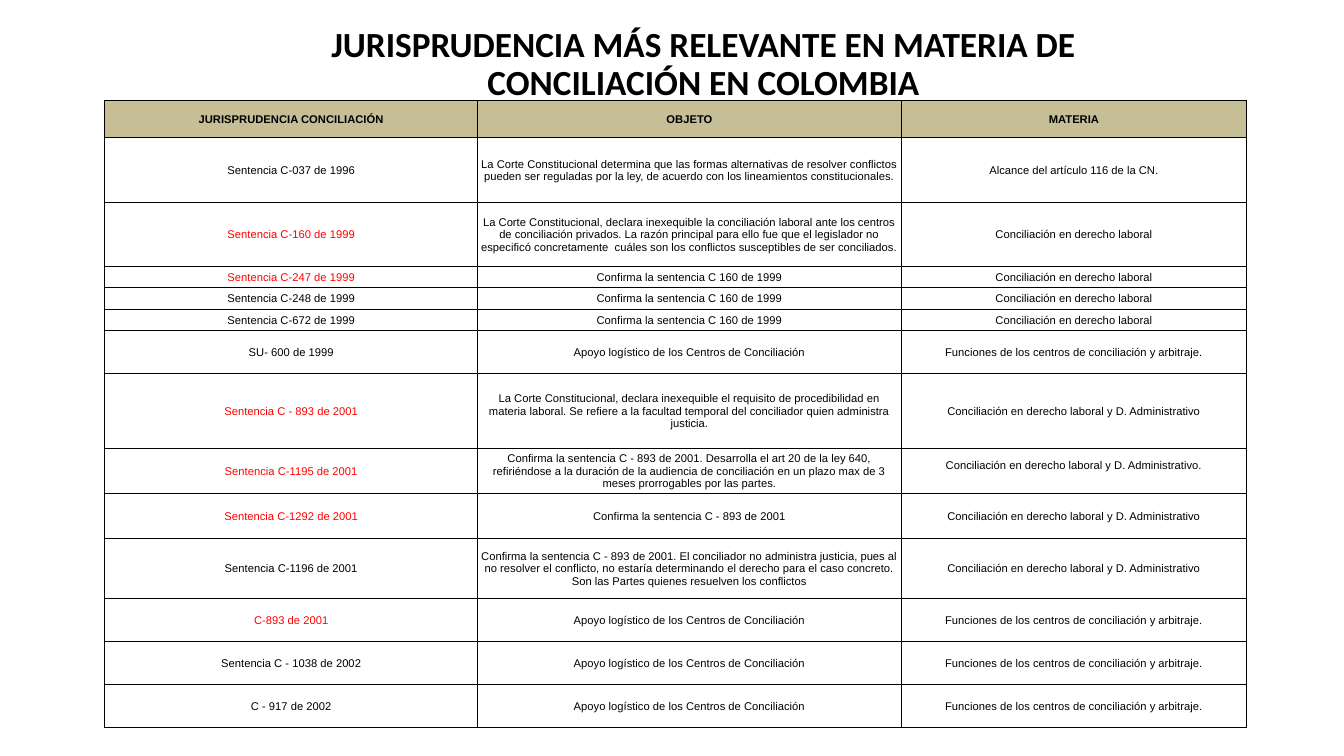
import pptx
import pptx.dml.color
import pptx.enum.text
import pptx.oxml
import pptx.oxml.ns
import pptx.util
from pptx.util import Cm

BLACK, RED, KHAKI = "000000", "FF0000", "C5BE97"
CENTER = pptx.enum.text.PP_ALIGN.CENTER
MIDDLE = pptx.enum.text.MSO_ANCHOR.MIDDLE


def rgb(value):
    return pptx.dml.color.RGBColor.from_string(value)


def add_borders(cell):
    for side in ("lnL", "lnR", "lnT", "lnB"):
        cell._tc.get_or_add_tcPr().append(pptx.oxml.parse_xml(
            f'<a:{side} {pptx.oxml.ns.nsdecls("a")} w="6350"><a:solidFill>'
            f'<a:srgbClr val="{BLACK}"/></a:solidFill></a:{side}>'))


LABOR = "Conciliación en derecho laboral"
LABOR_ADMIN = "Conciliación en derecho laboral y D. Administrativo"
CENTERS = "Funciones de los centros de conciliación y arbitraje."
SUPPORT = "Apoyo logístico de los Centros de Conciliación"
CONFIRMS_160 = "Confirma la sentencia C 160 de 1999"
CONFIRMS_893 = "Confirma la sentencia C - 893 de 2001"

# Row height in cm, colour of the ruling, then the three columns
rulings = [
    (0.94, BLACK, "JURISPRUDENCIA CONCILIACIÓN", "OBJETO", "MATERIA"),
    (1.62, BLACK, "Sentencia C-037 de 1996",
     "La Corte Constitucional determina que las formas alternativas de resolver "
     "conflictos pueden ser reguladas por la ley, de acuerdo con los lineamientos "
     "constitucionales.", "Alcance del artículo 116 de la CN."),
    (1.62, RED, "Sentencia C-160 de 1999",
     "La Corte Constitucional, declara inexequible la conciliación laboral ante los "
     "centros de conciliación privados. La razón principal para ello fue que el "
     "legislador no especificó concretamente  cuáles son los conflictos susceptibles "
     "de ser conciliados.", LABOR),
    (0.54, RED, "Sentencia C-247 de 1999", CONFIRMS_160, LABOR),
    (0.54, BLACK, "Sentencia C-248 de 1999", CONFIRMS_160, LABOR),
    (0.54, BLACK, "Sentencia C-672 de 1999", CONFIRMS_160, LABOR),
    (1.08, BLACK, "SU- 600 de 1999", SUPPORT, CENTERS),
    (1.88, RED, "Sentencia C - 893 de 2001",
     "La Corte Constitucional, declara inexequible el requisito de procedibilidad en "
     "materia laboral. Se refiere a la facultad temporal del conciliador quien "
     "administra justicia.", LABOR_ADMIN),
    (1.14, RED, "Sentencia C-1195 de 2001",
     CONFIRMS_893 + ". Desarrolla el art 20 de la ley 640, refiriéndose a la duración "
     "de la audiencia de conciliación en un plazo max de 3 meses prorrogables por las "
     "partes.", LABOR_ADMIN + "."),
    (1.14, RED, "Sentencia C-1292 de 2001", CONFIRMS_893, LABOR_ADMIN),
    (1.51, BLACK, "Sentencia C-1196 de 2001",
     CONFIRMS_893 + ". El conciliador no administra justicia, pues al no resolver el "
     "conflicto, no estaría determinando el derecho para el caso concreto. Son las "
     "Partes quienes resuelven los conflictos", LABOR_ADMIN),
    (1.08, RED, "C-893 de 2001", SUPPORT, CENTERS),
    (1.08, BLACK, "Sentencia C - 1038 de 2002", SUPPORT, CENTERS),
    (1.08, BLACK, "C - 917 de 2002", SUPPORT, CENTERS),
]
column_widths = (9.4, 10.67, 8.71)

presentation = pptx.Presentation()
presentation.slide_width, presentation.slide_height = Cm(33.87), Cm(19.05)
slide = presentation.slides.add_slide(presentation.slide_layouts[5])

title = slide.shapes.title
title.left, title.top, title.width, title.height = Cm(7.9), Cm(0.74), Cm(19.66), Cm(1.78)
title.text_frame.text = "JURISPRUDENCIA MÁS RELEVANTE EN MATERIA DE CONCILIACIÓN EN COLOMBIA"
title.text_frame.word_wrap = True
title.text_frame.auto_size = pptx.enum.text.MSO_AUTO_SIZE.NONE
title.text_frame.vertical_anchor = MIDDLE
heading = title.text_frame.paragraphs[0]
heading.alignment = CENTER
heading.line_spacing = 0.9
heading_font = heading.runs[0].font
heading_font.name, heading_font.size, heading_font.bold = "Calibri", pptx.util.Pt(25.2), True
heading_font.color.rgb = rgb(BLACK)

table = slide.shapes.add_table(
    len(rulings), len(column_widths), Cm(2.64), Cm(2.53),
    Cm(sum(column_widths)), Cm(sum(ruling[0] for ruling in rulings))).table
table.horz_banding = False
for column, width in zip(table.columns, column_widths):
    column.width = Cm(width)

for row_index, (height, ruling_color, *texts) in enumerate(rulings):
    table.rows[row_index].height = Cm(height)
    is_header = row_index == 0
    for column_index, text in enumerate(texts):
        cell = table.cell(row_index, column_index)
        cell.margin_left = cell.margin_right = cell.margin_top = Cm(0.03)
        # The one entry of this column that sits above the middle of its row
        cell.margin_bottom = Cm(0.3 if text == LABOR_ADMIN + "." else 0)
        cell.vertical_anchor = MIDDLE
        add_borders(cell)
        if is_header:
            cell.fill.solid()
            cell.fill.fore_color.rgb = rgb(KHAKI)
        else:
            cell.fill.background()
        cell.text_frame.text = text
        paragraph = cell.text_frame.paragraphs[0]
        paragraph.alignment = CENTER
        font = paragraph.runs[0].font
        font.name, font.size, font.bold = "Arial", pptx.util.Pt(8), is_header
        font.color.rgb = rgb(ruling_color if column_index == 0 else BLACK)

presentation.save("out.pptx")
